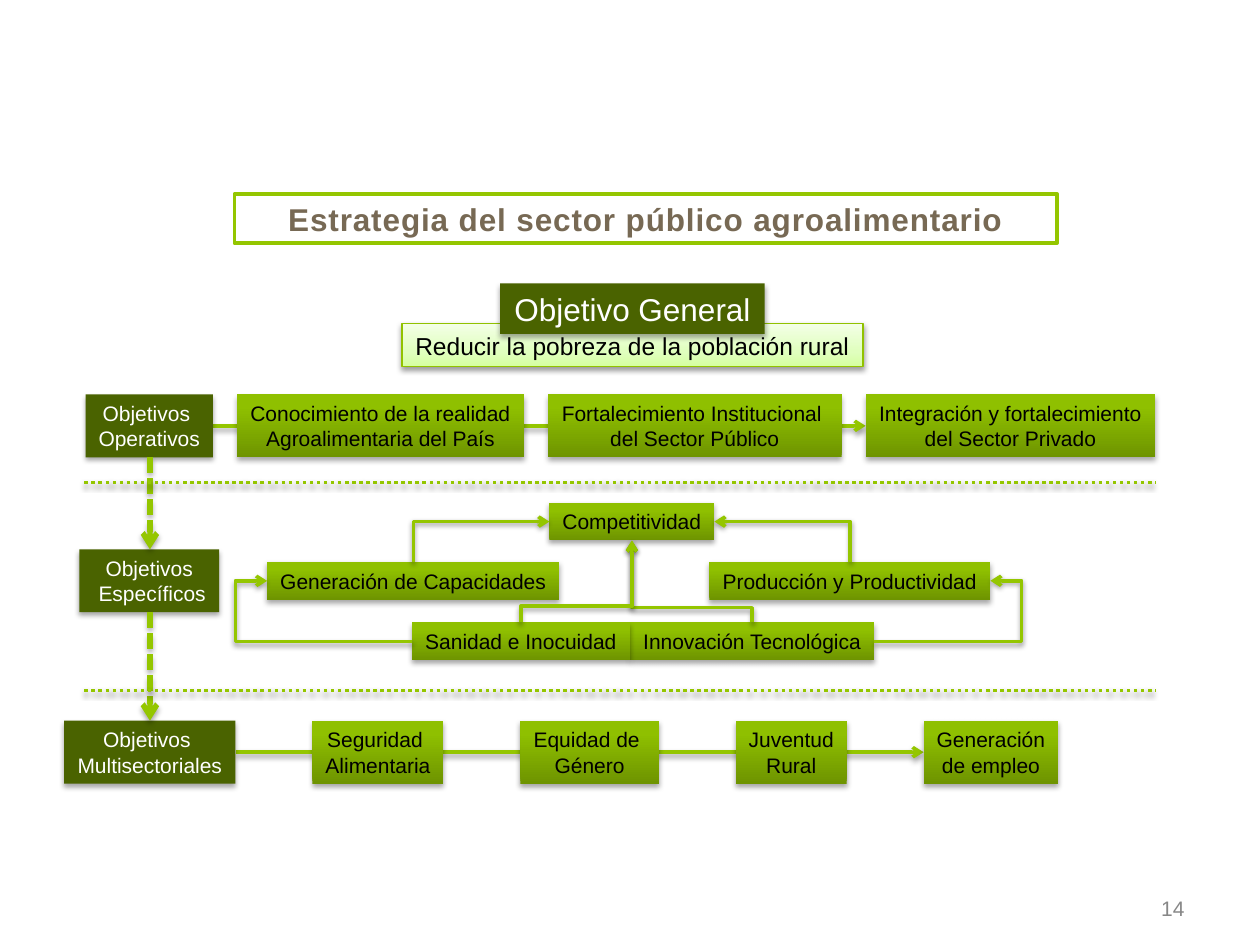
from lxml import etree
from pptx import Presentation
from pptx.dml.color import RGBColor
from pptx.enum.dml import MSO_LINE
from pptx.enum.shapes import MSO_CONNECTOR, MSO_SHAPE
from pptx.enum.text import MSO_ANCHOR, MSO_AUTO_SIZE, PP_ALIGN
from pptx.oxml.ns import qn
from pptx.util import Inches, Pt

RECTANGLE = MSO_SHAPE.RECTANGLE
STRAIGHT, ELBOW = MSO_CONNECTOR.STRAIGHT, MSO_CONNECTOR.ELBOW
DASHES, DOTS = MSO_LINE.SQUARE_DOT, MSO_LINE.ROUND_DOT
CENTER, RIGHT = PP_ALIGN.CENTER, PP_ALIGN.RIGHT
MIDDLE = MSO_ANCHOR.MIDDLE
GROW, FIXED = MSO_AUTO_SIZE.SHAPE_TO_FIT_TEXT, MSO_AUTO_SIZE.NONE

COLORS = {"lime": "94C600", "edge": "91C200", "dark": "4A6300", "white": "FFFFFF",
          "black": "000000", "number": "878787"}
GREEN = [(0, "6E9400"), (80, "8FC000"), (100, "90C100")]
PALE = [(0, "D5FFA2"), (35, "E0FFBE"), (100, "F3FFE6")]
BROWN = [(25, "776954"), (100, "554B3A")]

# Vertical grid, in inches
OPERATIVE_TOP, SPECIFIC_TOP, MULTI_TOP = 3.13, 4.36, 5.72
TWO_LINES, ONE_LINE = 0.5, 0.3
DIVIDERS = (3.83, 5.48)
SPINE = 1.19


def rgb(name):
    return RGBColor.from_string(COLORS[name])


def set_gradient(fill, parent, stops, angle):
    """Replace the solid fill held by parent with a linear gradient."""
    fill.solid()
    solid = parent.find(qn("a:solidFill"))
    gradient = etree.Element(qn("a:gradFill"), rotWithShape="1")
    stop_list = etree.SubElement(gradient, qn("a:gsLst"))
    for position, color in stops:
        stop = etree.SubElement(stop_list, qn("a:gs"), pos=str(position * 1000))
        etree.SubElement(stop, qn("a:srgbClr"), val=color)
    etree.SubElement(gradient, qn("a:lin"), ang=str(angle * 60000), scaled="0")
    parent.replace(solid, gradient)


def add_shadow(owner, distance, opacity):
    effects = etree.SubElement(owner._element.spPr, qn("a:effectLst"))
    shadow = etree.SubElement(effects, qn("a:outerShdw"), blurRad=str(Pt(3.1)),
                              dist=str(Pt(distance)), dir="5400000", rotWithShape="0")
    color = etree.SubElement(shadow, qn("a:srgbClr"), val=COLORS["black"])
    etree.SubElement(color, qn("a:alpha"), val=str(opacity * 1000))


def write(frame, text, size=12, color="black", bold=None, spacing=None,
          align=CENTER, wrap=False, fit=GROW):
    frame.word_wrap = wrap
    frame.vertical_anchor = MIDDLE
    frame.auto_size = fit
    for number, line in enumerate(text.split("\n")):
        paragraph = frame.paragraphs[0] if number == 0 else frame.add_paragraph()
        paragraph.alignment = align
        run = paragraph.add_run()
        run.text = line
        run.font.name, run.font.size, run.font.bold = "Arial", Pt(size), bold
        properties = run._r.get_or_add_rPr()
        if spacing:
            properties.set("spc", str(int(spacing * 100)))
        if isinstance(color, list):
            set_gradient(run.font.fill, properties, color, 90)
        else:
            run.font.color.rgb = rgb(color)


def add_box(slide, text, area, fill=GREEN, edge=None, shadow=(1.8, 35), **style):
    """Draw a labelled box and return its area for connecting."""
    box = slide.shapes.add_shape(RECTANGLE, *map(Inches, area))
    if isinstance(fill, list):
        set_gradient(box.fill, box._element.spPr, fill, 270)
    else:
        box.fill.solid()
        box.fill.fore_color.rgb = rgb(fill)
    if edge:
        box.line.color.rgb = rgb(edge)
        box.line.width = Pt(0.75)
    else:
        box.line.fill.background()
    add_shadow(box, *shadow)
    write(box.text_frame, text, **style)
    return area


def style_line(line, width=2, dash=None, arrow=True, shadow=(1.6, 38)):
    line.line.color.rgb = rgb("lime")
    line.line.width = Pt(width)
    if dash:
        line.line.dash_style = dash
    if arrow:
        etree.SubElement(line.line._get_or_add_ln(), qn("a:tailEnd"), type="arrow")
    add_shadow(line, *shadow)


def add_line(slide, start, end, **style):
    line = slide.shapes.add_connector(STRAIGHT, *map(Inches, (*start, *end)))
    style_line(line, **style)


def add_elbow(slide, start, end, bend=None, upward=False):
    """Bent arrow; bend is the share of the way to the turn, None for one corner."""
    dx, dy = end[0] - start[0], end[1] - start[1]
    width, height = (abs(dy), abs(dx)) if upward else (abs(dx), abs(dy))
    left = (start[0] + end[0] - width) / 2
    top = (start[1] + end[1] - height) / 2
    elbow = slide.shapes.add_connector(
        ELBOW, *map(Inches, (left, top, left + width, top + height)))
    frame = elbow._element.spPr.find(qn("a:xfrm"))
    if upward:
        turn = 90 if dx > 0 else 270
    else:
        turn = 180 if dx < 0 else 0
    frame.set("rot", str(turn * 60000))
    if turn != 180:
        frame.set("flipV", "1")
    if turn == 90:
        frame.set("flipH", "1")
    geometry = elbow._element.spPr.find(qn("a:prstGeom"))
    if bend is None:
        geometry.set("prst", "bentConnector2")
    else:
        guides = geometry.find(qn("a:avLst"))
        if guides is None:
            guides = etree.SubElement(geometry, qn("a:avLst"))
        etree.SubElement(guides, qn("a:gd"), name="adj1", fmla=f"val {round(bend * 100000)}")
    style_line(elbow)


def side(area, across, down):
    """Point of an area at the given shares of its width and height."""
    left, top, width, height = area
    return left + across * width, top + down * height


def add_row(slide, left, top, gap, entries):
    """Heading and objectives, evenly spaced along one arrow."""
    areas = []
    for _, width in entries:
        areas.append((left, top, width, TWO_LINES))
        left += width + gap
    add_line(slide, side(areas[0], 1, 0.5), side(areas[-1], 0, 0.5))
    for number, ((text, _), area) in enumerate(zip(entries, areas)):
        if number == 0:
            add_box(slide, text, area, fill="dark", color="white")
        else:
            add_box(slide, text, area)


def add_specific_objectives(slide):
    add_box(slide, "Objetivos\n Específicos", (0.63, SPECIFIC_TOP, 1.11, TWO_LINES),
            fill="dark", color="white")
    competitiveness, production, innovation, health, capacities = [
        add_box(slide, text, (left, top, width, ONE_LINE))
        for text, left, top, width in (
            ("Competitividad", 4.36, 3.99, 1.31),
            ("Producción y Productividad", 5.63, 4.46, 2.23),
            ("Innovación Tecnológica", 5, 4.94, 1.94),
            ("Sanidad e Inocuidad", 3.27, 4.94, 1.73),
            ("Generación de Capacidades", 2.12, 4.46, 2.32))]
    goal = side(competitiveness, 0.5, 1)
    add_elbow(slide, side(health, 0, 0.5), side(capacities, 0, 0.5), 1.22)
    add_elbow(slide, side(innovation, 0.5, 0), goal, 0.18, upward=True)
    add_elbow(slide, side(capacities, 0.5, 0), side(competitiveness, 0, 0.5), upward=True)
    add_elbow(slide, side(production, 0.5, 0), side(competitiveness, 1, 0.5), upward=True)
    add_elbow(slide, side(health, 0.5, 0), goal, 0.2, upward=True)
    add_elbow(slide, side(innovation, 1, 0.5), side(production, 1, 0.5), 1.27)


def add_title(slide):
    title = slide.shapes.title
    title.left, title.top, title.width, title.height = map(Inches, (1.86, 1.54, 6.53, 0.39))
    title.line.color.rgb = rgb("lime")
    title.line.width = Pt(2)
    frame = title.text_frame
    frame.margin_left = frame.margin_right = Inches(0.04)
    frame.margin_top = frame.margin_bottom = Inches(0.04)
    write(frame, "Estrategia del sector público agroalimentario", size=18, color=BROWN,
          bold=True, spacing=0.5, wrap=True, fit=FIXED)


def main():
    deck = Presentation()
    deck.slide_width, deck.slide_height = Inches(10), Inches(7.5)
    slide = deck.slides.add_slide(deck.slide_layouts[5])

    # Title and general objective
    add_title(slide)
    add_box(slide, "Reducir la pobreza de la población rural", (3.19, 2.57, 3.66, 0.34),
            fill=PALE, edge="edge", shadow=(1.6, 38), size=14)
    add_box(slide, "Objetivo General", (3.97, 2.25, 2.1, 0.4),
            fill="dark", size=18, color="white")

    # Three levels of objectives
    add_row(slide, 0.68, OPERATIVE_TOP, 0.19, (
        ("Objetivos \nOperativos", 1.01),
        ("Conocimiento de la realidad\nAgroalimentaria del País", 2.28),
        ("Fortalecimiento Institucional \ndel Sector Público", 2.33),
        ("Integración y fortalecimiento\ndel Sector Privado", 2.3)))
    add_row(slide, 0.51, MULTI_TOP, 0.61, (
        ("Objetivos \nMultisectoriales", 1.36), ("Seguridad \nAlimentaria", 1.04),
        ("Equidad de \nGénero", 1.1), ("Juventud\nRural", 0.88),
        ("Generación\nde empleo", 1.07)))
    add_specific_objectives(slide)

    # Links between levels and dotted dividers
    for top, bottom in ((OPERATIVE_TOP, SPECIFIC_TOP), (SPECIFIC_TOP, MULTI_TOP)):
        add_line(slide, (SPINE, top + TWO_LINES), (SPINE, bottom),
                 width=3, dash=DASHES, shadow=(1.8, 35))
    for height in DIVIDERS:
        add_line(slide, (0.67, height), (9.17, height), dash=DOTS, arrow=False)

    # Page number
    number = slide.shapes.add_textbox(*map(Inches, (9.08, 7.07, 0.42, 0.28)))
    write(number.text_frame, "14", color="number", align=RIGHT, wrap=True, fit=FIXED)
    deck.save("out.pptx")


if __name__ == "__main__":
    main()
